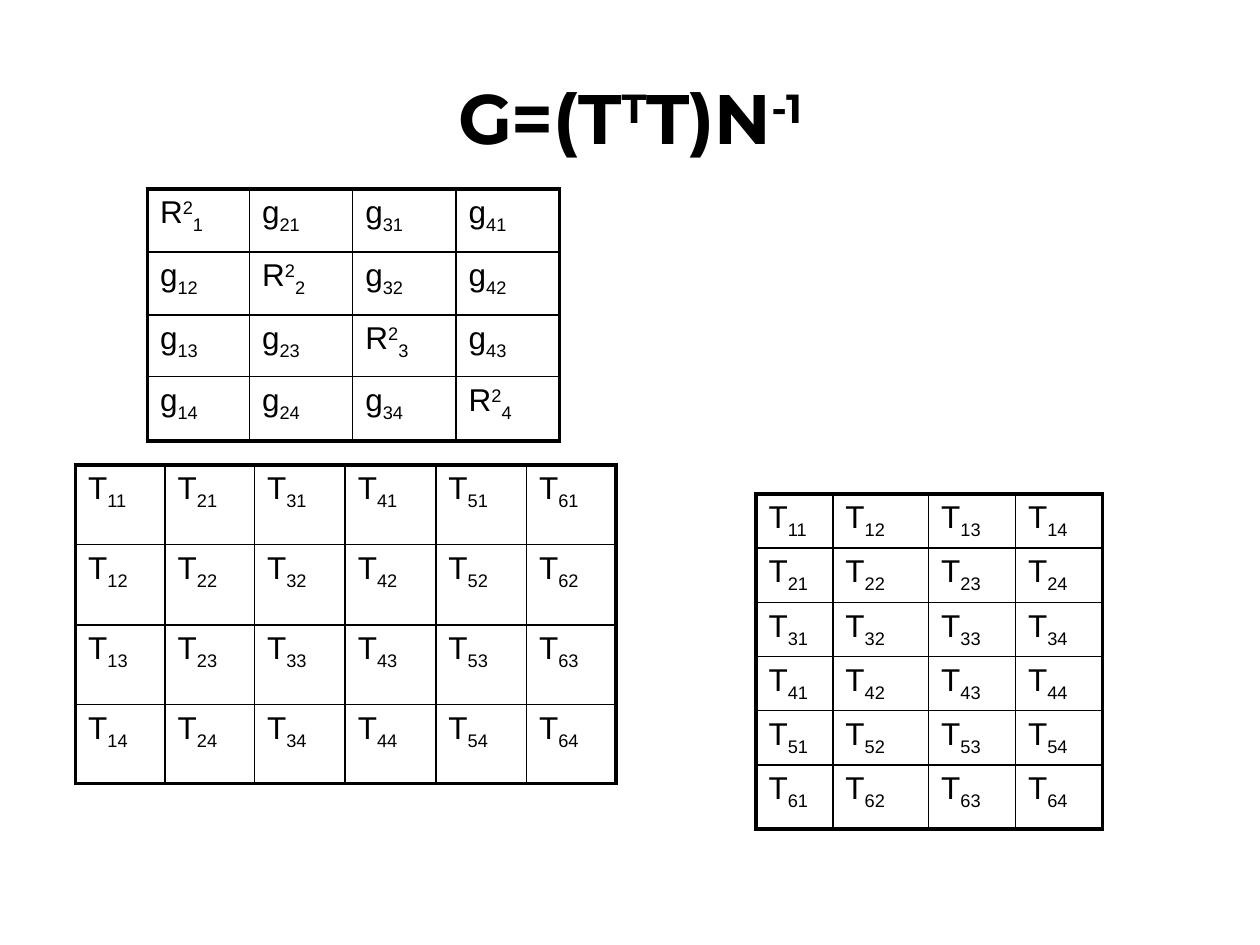
from dataclasses import dataclass
from typing import Callable

from lxml.etree import SubElement
from pptx import Presentation
from pptx.dml.color import RGBColor
from pptx.enum.text import MSO_ANCHOR, PP_ALIGN
from pptx.oxml.ns import qn
from pptx.util import Inches, Pt

BLACK = "000000"
OUTER_WIDTH, INNER_WIDTH = 2.25, 1
SUPERSCRIPT, SUBSCRIPT = 30, -25

# A run is its text and its baseline shift in percent
Runs = list[tuple[str, int]]


@dataclass
class Matrix:
    left: float
    top: float
    columns: list[float]
    rows: list[float]
    entry: Callable[[int, int], Runs]


def color(value: str) -> RGBColor:
    return RGBColor.from_string(value)


def write_runs(paragraph, runs: Runs, font_values: dict) -> None:
    for text, baseline in runs:
        run = paragraph.add_run()
        run.text = text
        for name, value in font_values.items():
            setattr(run.font, name, value)
        run.font.color.rgb = color(BLACK)
        if baseline:
            run.font._element.set("baseline", str(baseline * 1000))


def set_borders(cell, widths: dict[str, float]) -> None:
    properties = cell._tc.get_or_add_tcPr()
    for side, width in widths.items():
        line = SubElement(properties, qn(f"a:ln{side}"), w=str(Pt(width)))
        fill = SubElement(line, qn("a:solidFill"))
        SubElement(fill, qn("a:srgbClr"), val=BLACK)


def draw_matrix(slide, matrix: Matrix) -> None:
    row_count, column_count = len(matrix.rows), len(matrix.columns)
    table = slide.shapes.add_table(
        row_count, column_count, Inches(matrix.left), Inches(matrix.top),
        Inches(sum(matrix.columns)), Inches(sum(matrix.rows))).table
    table.first_row = table.horz_banding = False
    for column, width in zip(table.columns, matrix.columns):
        column.width = Inches(width)
    for row, height in zip(table.rows, matrix.rows):
        row.height = Inches(height)

    for i in range(row_count):
        for j in range(column_count):
            cell = table.cell(i, j)
            on_edge = {"L": j == 0, "R": j == column_count - 1,
                       "T": i == 0, "B": i == row_count - 1}
            set_borders(cell, {side: OUTER_WIDTH if edge else INNER_WIDTH
                               for side, edge in on_edge.items()})
            cell.fill.background()
            write_runs(cell.text_frame.paragraphs[0], matrix.entry(i + 1, j + 1),
                       {"name": "Arial", "size": Pt(18)})


def score(row: int, column: int) -> Runs:
    return [("T", 0), (f"{row}{column}", SUBSCRIPT)]


def transposed_score(row: int, column: int) -> Runs:
    return score(column, row)


def product(row: int, column: int) -> Runs:
    if row == column:
        return [("R", 0), ("2", SUPERSCRIPT), (str(row), SUBSCRIPT)]
    return [("g", 0), (f"{column}{row}", SUBSCRIPT)]


MATRICES = [
    Matrix(6, 3.92, [0.61, 0.76, 0.69, 0.69], [0.43] * 5 + [0.51], score),
    Matrix(0.6, 3.69, [0.71, 0.71, 0.72, 0.72, 0.72, 0.71],
           [0.63, 0.64, 0.63, 0.63], transposed_score),
    Matrix(1.17, 1.5, [0.81, 0.82, 0.82, 0.82], [0.5, 0.5, 0.49, 0.51], product),
]


def main() -> None:
    presentation = Presentation()
    presentation.slide_width, presentation.slide_height = Inches(10), Inches(7.5)
    slide = presentation.slides.add_slide(presentation.slide_layouts[5])

    # Title formula
    title = slide.shapes.title
    box = {"left": 0.5, "top": 0.3, "width": 9, "height": 1.25}
    for name, value in box.items():
        setattr(title, name, Inches(value))
    title.text_frame.vertical_anchor = MSO_ANCHOR.MIDDLE
    paragraph = title.text_frame.paragraphs[0]
    paragraph.alignment = PP_ALIGN.CENTER
    write_runs(paragraph,
               [("G=(T", 0), ("T", SUPERSCRIPT), ("T)N", 0), ("-1", SUPERSCRIPT)],
               {"name": "Montserrat", "size": Pt(40), "bold": True})

    # Matrices
    for matrix in MATRICES:
        draw_matrix(slide, matrix)

    presentation.save("out.pptx")


if __name__ == "__main__":
    main()
